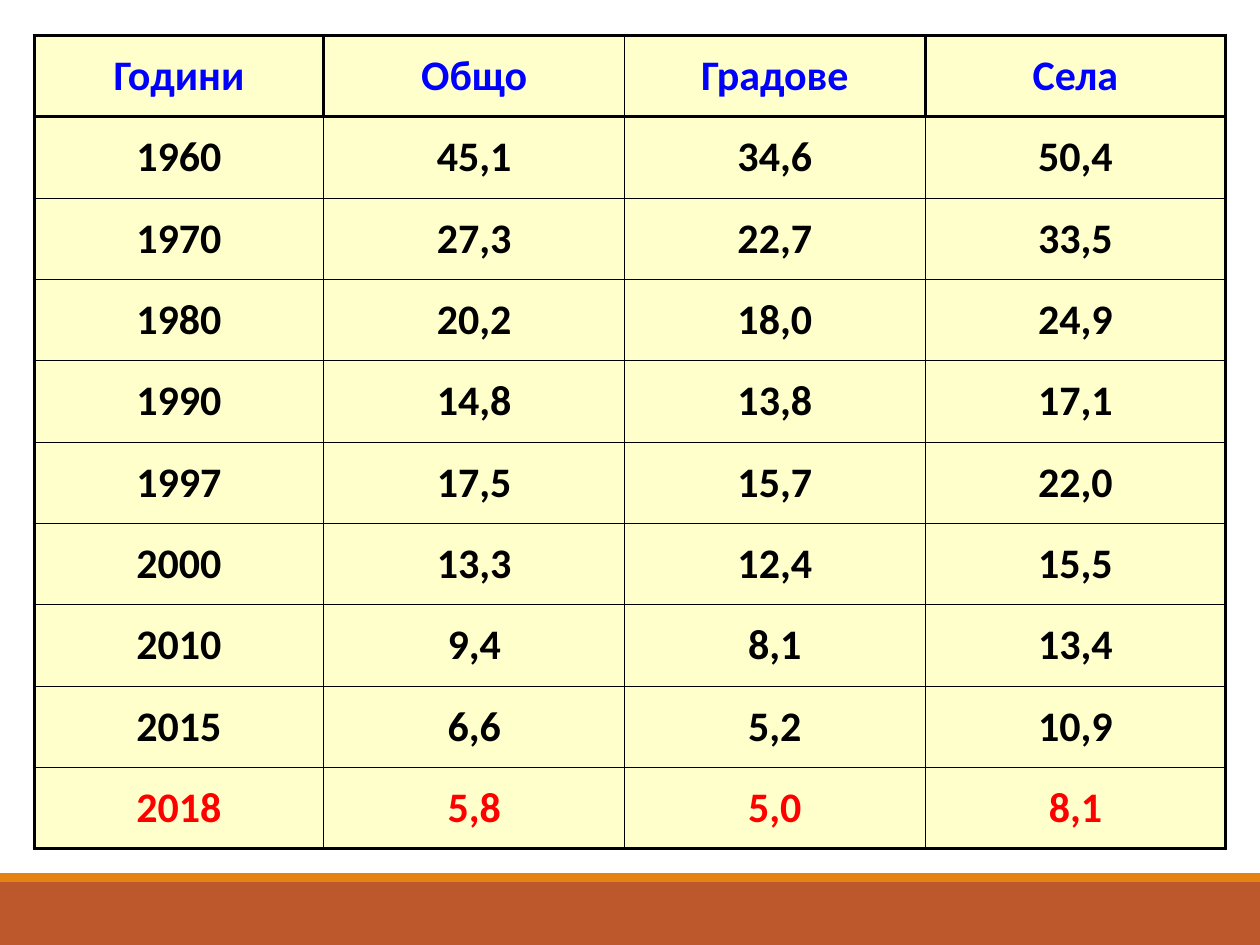
from lxml.etree import SubElement
from pptx import Presentation
from pptx.dml.color import RGBColor
from pptx.enum.shapes import MSO_SHAPE as Shape
from pptx.enum.text import MSO_ANCHOR as Anchor, PP_ALIGN as Align
from pptx.oxml.ns import qn
from pptx.util import Pt

# Content
HEADER = ("Години", "Общо", "Градове", "Села")
RATES = [
    ("1960", "45,1", "34,6", "50,4"),
    ("1970", "27,3", "22,7", "33,5"),
    ("1980", "20,2", "18,0", "24,9"),
    ("1990", "14,8", "13,8", "17,1"),
    ("1997", "17,5", "15,7", "22,0"),
    ("2000", "13,3", "12,4", "15,5"),
    ("2010", "9,4", "8,1", "13,4"),
    ("2015", "6,6", "5,2", "10,9"),
    ("2018", "5,8", "5,0", "8,1"),
]
ROWS = [HEADER, *RATES]
LAST = len(ROWS) - 1

# Colours
BLACK = RGBColor(0x00, 0x00, 0x00)
BLUE = RGBColor(0x00, 0x00, 0xFF)
RED = RGBColor(0xFF, 0x00, 0x00)
CREAM = RGBColor(0xFF, 0xFF, 0xCC)
RUST = RGBColor(0xBD, 0x58, 0x2C)
ORANGE = RGBColor(0xE4, 0x83, 0x12)

# Layout, in points
PAGE_WIDTH, PAGE_HEIGHT = 720, 540
TABLE_LEFT, TABLE_TOP = 19.5, 20.2
COLUMN_WIDTHS = (165.6, 171.8, 171.8, 171.8)
ROW_HEIGHT = 46.5
THICK, THIN = 2, 0.75
FOOTER_BARS = [(504, 36, RUST), (499, 5, ORANGE)]  # top, height, colour
ROW_COLOURS = {0: BLUE, LAST: RED}
TEXT_FORMAT = {"name": "Calibri", "size": Pt(24), "bold": True}


def vertical_width(row, edge):
    """Width of the upright rule at a column edge."""
    outer = edge in (0, len(HEADER))
    return THICK if outer or (row == 0 and edge != 2) else THIN


def horizontal_width(edge):
    """Width of the level rule at a row edge."""
    return THICK if edge in (0, 1, len(ROWS)) else THIN


def add_border(cell, side, width):
    line = SubElement(cell._tc.get_or_add_tcPr(), qn(f"a:{side}"), w=str(Pt(width)))
    fill = SubElement(line, qn("a:solidFill"))
    SubElement(fill, qn("a:srgbClr"), val=str(BLACK))


def fill_cell(cell, text, row, column):
    borders = {
        "lnL": vertical_width(row, column),
        "lnR": vertical_width(row, column + 1),
        "lnT": horizontal_width(row),
        "lnB": horizontal_width(row + 1),
    }
    for side, width in borders.items():
        add_border(cell, side, width)
    cell.fill.solid()
    cell.fill.fore_color.rgb = CREAM
    cell.vertical_anchor = Anchor.MIDDLE
    para = cell.text_frame.paragraphs[0]
    para.alignment = Align.CENTER
    span = para.add_run()
    span.text = text
    for name, value in TEXT_FORMAT.items():
        setattr(span.font, name, value)
    span.font.color.rgb = ROW_COLOURS.get(row, BLACK)


def main():
    deck = Presentation()
    deck.slide_width, deck.slide_height = Pt(PAGE_WIDTH), Pt(PAGE_HEIGHT)
    page = deck.slides.add_slide(deck.slide_layouts[6])

    # Footer bars
    for top, height, colour in FOOTER_BARS:
        bar = page.shapes.add_shape(
            Shape.RECTANGLE, Pt(0), Pt(top), Pt(PAGE_WIDTH), Pt(height))
        bar.shadow.inherit = False
        bar.fill.solid()
        bar.fill.fore_color.rgb = colour
        bar.line.fill.background()

    # Table
    table = page.shapes.add_table(
        len(ROWS), len(HEADER), Pt(TABLE_LEFT), Pt(TABLE_TOP),
        Pt(sum(COLUMN_WIDTHS)), Pt(ROW_HEIGHT * len(ROWS))).table
    for column, width in zip(table.columns, COLUMN_WIDTHS):
        column.width = Pt(width)
    for row, texts in enumerate(ROWS):
        table.rows[row].height = Pt(ROW_HEIGHT)
        for column, text in enumerate(texts):
            fill_cell(table.cell(row, column), text, row, column)

    deck.save("out.pptx")


if __name__ == "__main__":
    main()
